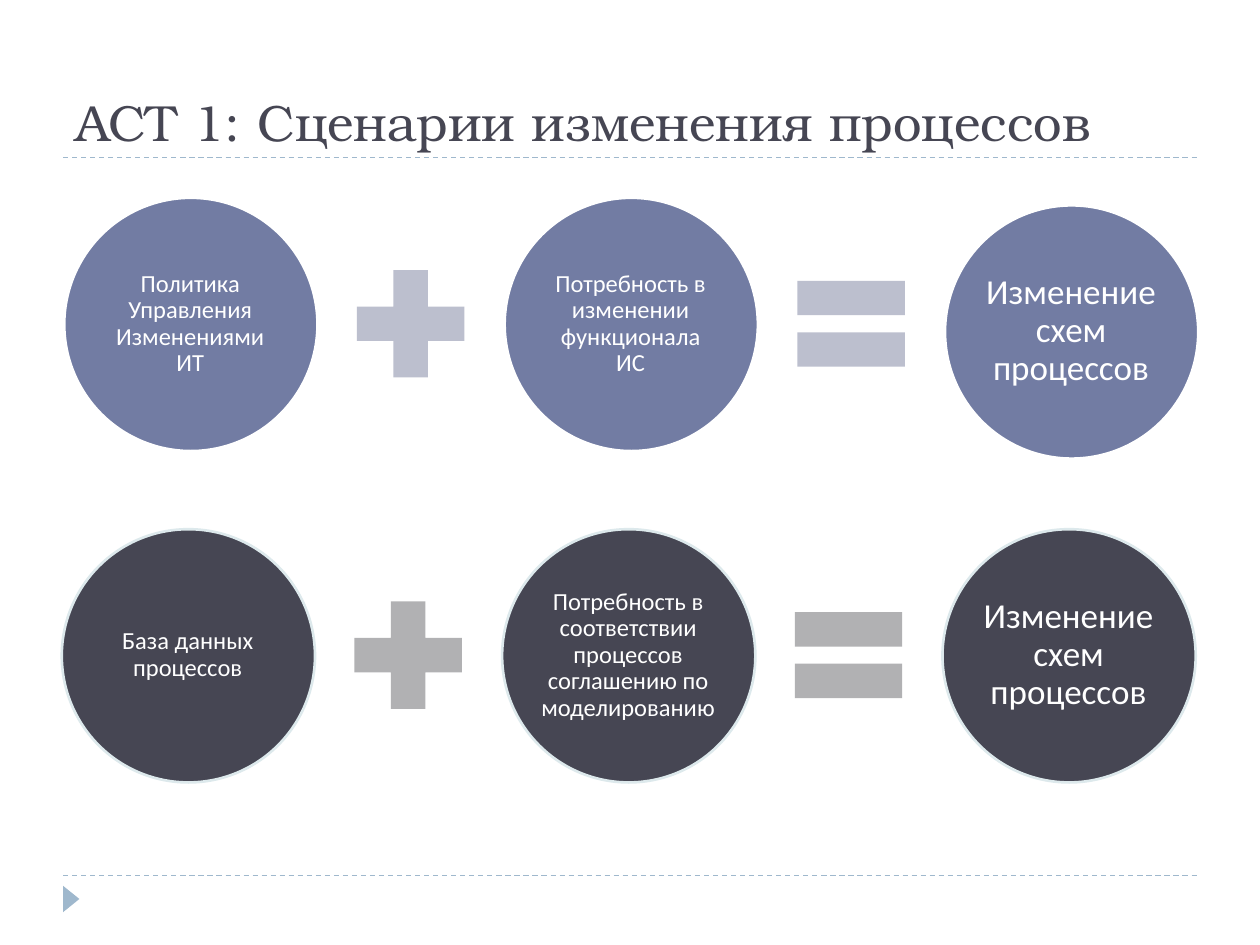
import pptx
import pptx.util
import pptx.dml.color
import pptx.enum.dml
import pptx.enum.shapes
import pptx.enum.text
import pptx.oxml.ns
import lxml.etree

Inches = pptx.util.Inches
Pt = pptx.util.Pt
Kind = pptx.enum.shapes.MSO_SHAPE
Anchor = pptx.enum.text.MSO_ANCHOR
Align = pptx.enum.text.PP_ALIGN

COLORS = {
    "white": "FFFFFF",
    "rule": "9FB8CD",
    "dark": "464653",
    "blue": "727CA3",
    "pale": "BCBFCE",
    "gray": "B1B1B3",
    "rim": "DDE9EC",
}


class Deck:
    head = "TeX Gyre Bonum"
    body = "Calibri"

    def __init__(self, slide):
        self.slide = slide

    def color(self, name):
        return pptx.dml.color.RGBColor.from_string(COLORS[name])

    def group(self):
        return self.slide.shapes.add_group_shape().shapes

    def rule(self, y):
        line = self.slide.shapes.add_connector(
            pptx.enum.shapes.MSO_CONNECTOR.STRAIGHT,
            Inches(0.5), Inches(y), Inches(9.5), Inches(y))
        line.line.color.rgb = self.color("rule")
        line.line.width = Pt(0.75)
        line.line.dash_style = pptx.enum.dml.MSO_LINE.DASH
        lxml.etree.SubElement(line._element.spPr, pptx.oxml.ns.qn("a:effectLst"))

    def shape(self, home, kind, x, y, wide, high, fill, rim=None):
        item = home.add_shape(kind, Inches(x), Inches(y), Inches(wide), Inches(high))
        item.shadow.inherit = False
        item.fill.solid()
        item.fill.fore_color.rgb = self.color(fill)
        if rim:
            item.line.color.rgb = self.color(rim)
            item.line.width = Pt(1.5)
        else:
            item.line.fill.background()
        return item

    def text(self, home, words, x, y, wide, high, size, font, color, anchor):
        box = home.add_textbox(Inches(x), Inches(y), Inches(wide), Inches(high))
        frame = box.text_frame
        frame.word_wrap = True
        frame.vertical_anchor = anchor
        run = frame.paragraphs[0].add_run()
        run.text = words
        run.font.size = Pt(size)
        run.font.name = font
        run.font.color.rgb = self.color(color)
        return frame

    def label(self, home, words, x, y, size, inset):
        frame = self.text(home, words, x, y, 1.42, 1.42, size,
                          self.body, "white", Anchor.MIDDLE)
        frame.margin_left = frame.margin_right = Inches(inset)
        frame.margin_top = frame.margin_bottom = Inches(inset)
        frame.paragraphs[0].alignment = Align.CENTER
        frame.paragraphs[0].line_spacing = 0.9

    def sum(self, terms, left, top, drop, fill, rim, tint):
        home = self.group()
        signs = [Kind.MATH_PLUS, Kind.MATH_EQUAL]
        last = len(terms) - 1
        for i, words in enumerate(terms):
            x = left + 3.495 * i
            y = top + (drop if i == last else 0)
            size, inset = (20, 0.03) if i == last else (14, 0.02)
            self.shape(home, Kind.OVAL, x, y, 2.01, 2.01, fill, rim)
            self.label(home, words, x + 0.29, y + 0.29, size, inset)
            if i < last:
                self.shape(home, signs[i], x + 2.17, y + 0.42, 1.16, 1.16, tint)


def main():
    show = pptx.Presentation()
    show.slide_width = Inches(10)
    show.slide_height = Inches(7.5)
    deck = Deck(show.slides.add_slide(show.slide_layouts[6]))
    base = deck.slide.shapes

    for y in (6.95, 1.25):
        deck.rule(y)
    mark = deck.shape(base, Kind.ISOSCELES_TRIANGLE, 0.46, 7.07, 0.21, 0.13, "rule")
    mark.rotation = 90
    deck.text(base, "ACT 1: Сценарии изменения процессов", 0.5, 0.17, 9, 1.08,
              29, deck.head, "dark", Anchor.BOTTOM)

    goal = "Изменение схем процессов"
    deck.sum(["Политика Управления Изменениями ИТ",
              "Потребность в изменении функционала ИС", goal],
             0.51, 1.57, 0.06, "blue", "white", "pale")
    deck.sum(["База данных процессов",
              "Потребность в соответствии процессов соглашению по моделированию", goal],
             0.49, 4.2, 0, "dark", "rim", "gray")

    show.save("out.pptx")


if __name__ == "__main__":
    main()
